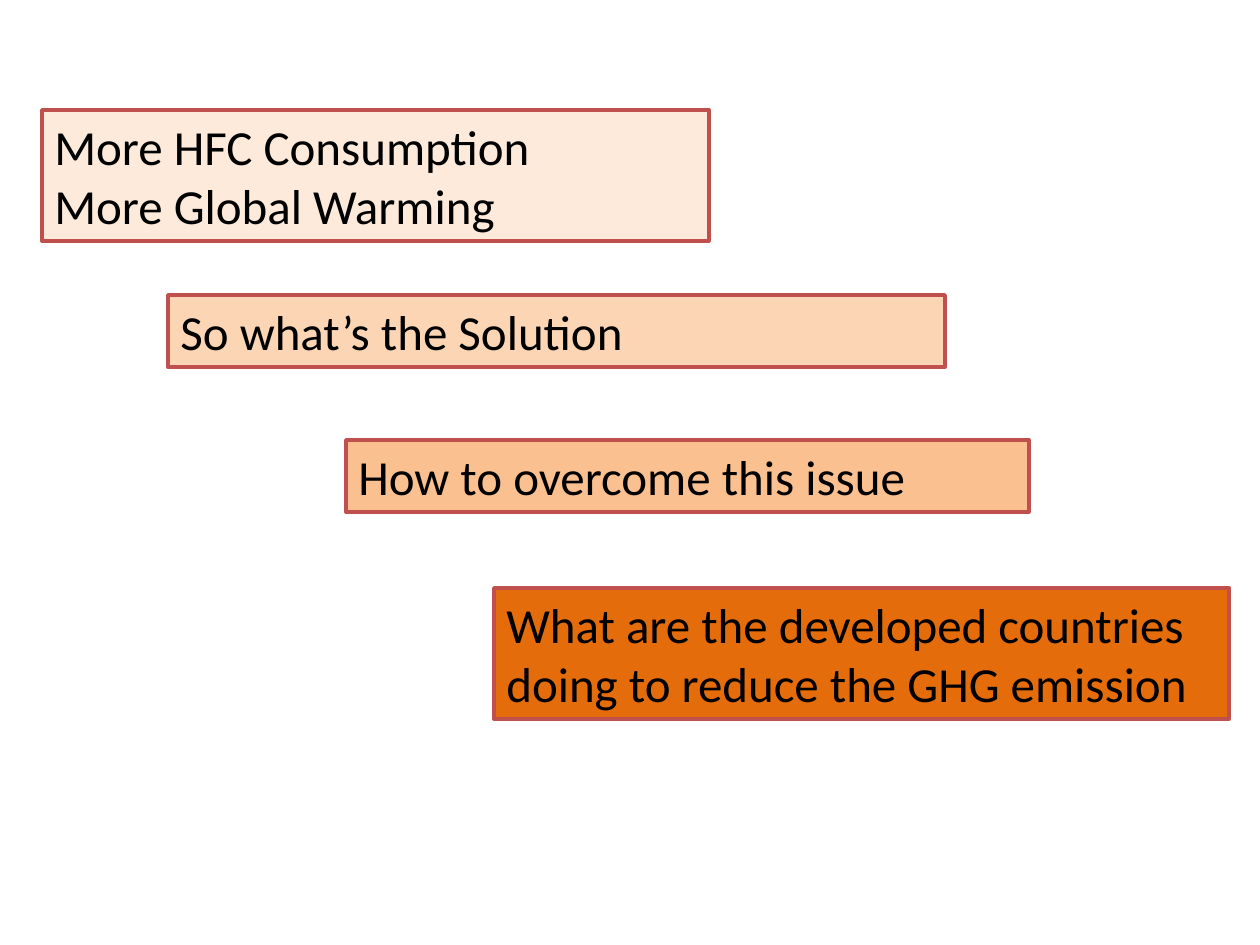
import pptx
import pptx.util
import pptx.dml.color
import pptx.enum.shapes
import pptx.enum.text

EMU_PER_PX = 914400 / 126  # 126 px to the inch

# Box (left, top, width, height) in px, fill, paragraphs
STEPS = [
    ((42, 110, 667, 131), "FDEADA", ["More HFC Consumption", "More Global Warming"]),
    ((168, 295, 777, 72), "FCD5B5", ["So what’s the Solution"]),
    ((346, 440, 683, 72), "FAC090", ["How to overcome this issue"]),
    ((494, 588, 735, 131), "E46C0A",
     ["What are the developed countries doing to reduce the GHG emission"]),
]


def px(n):
    return pptx.util.Emu(round(n * EMU_PER_PX))


def rgb(color):
    return pptx.dml.color.RGBColor.from_string(color)


def add_step(s, box, fill, lines):
    """One outlined box with left-aligned text."""
    sp = s.shapes.add_shape(pptx.enum.shapes.MSO_SHAPE.RECTANGLE, *map(px, box))
    sp.shadow.inherit = False
    sp.fill.solid()
    sp.fill.fore_color.rgb = rgb(fill)
    sp.line.color.rgb = rgb("C0504D")
    sp.line.width = pptx.util.Pt(2)

    # Text
    tf = sp.text_frame
    tf.word_wrap = True
    tf.auto_size = pptx.enum.text.MSO_AUTO_SIZE.SHAPE_TO_FIT_TEXT
    tf.vertical_anchor = pptx.enum.text.MSO_ANCHOR.TOP
    tf.text = "\n".join(lines)
    for p in tf.paragraphs:
        p.alignment = pptx.enum.text.PP_ALIGN.LEFT
        p.font.name = "Calibri"
        p.font.size = pptx.util.Pt(28)
        p.font.color.rgb = rgb("000000")


def main():
    prs = pptx.Presentation()
    prs.slide_width, prs.slide_height = px(1260), px(945)
    s = prs.slides.add_slide(prs.slide_layouts[6])

    # Staircase of boxes
    for box, fill, lines in STEPS:
        add_step(s, box, fill, lines)
    prs.save("out.pptx")


if __name__ == "__main__":
    main()
